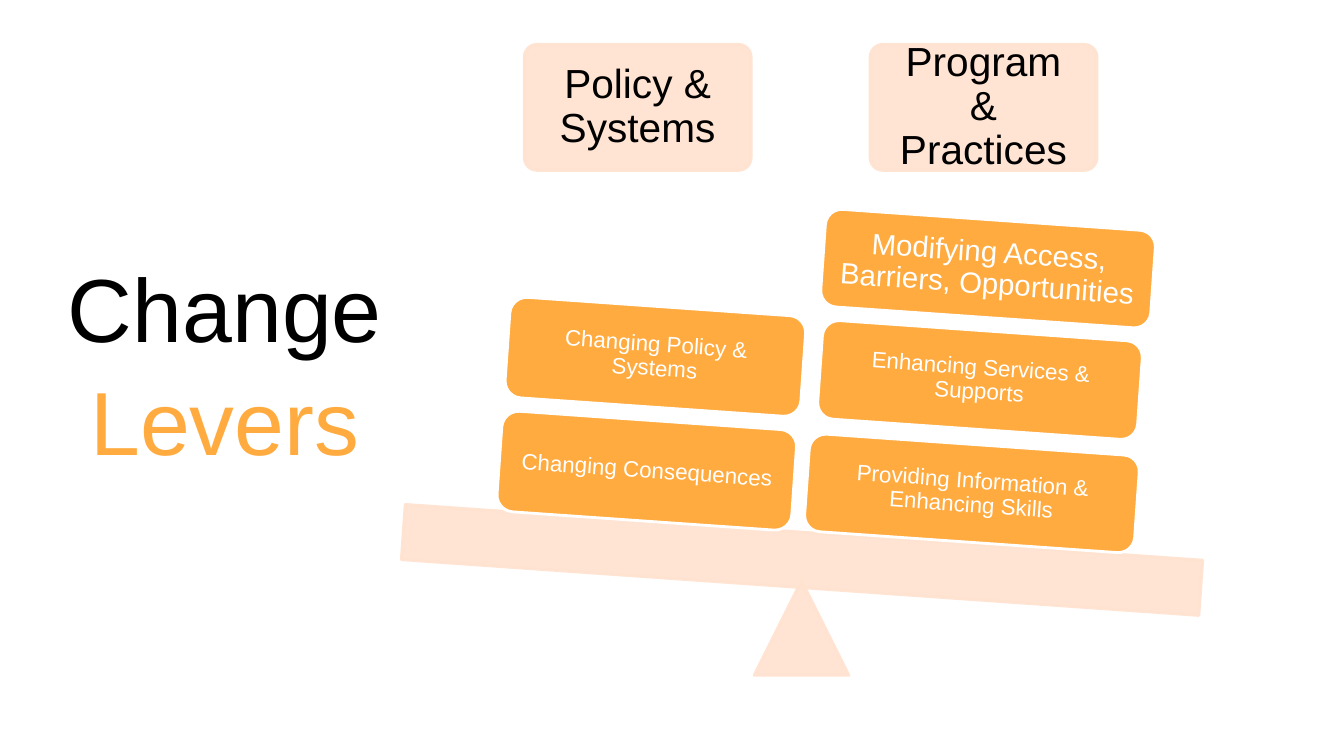
from lxml import etree
from pptx import Presentation
from pptx.dml.color import RGBColor
from pptx.enum import shapes, text
from pptx.oxml.ns import qn
from pptx.util import Inches, Pt

PEACH, ORANGE, WHITE, BLACK = "FFE2CF", "FFAB40", "FFFFFF", "000000"
TILT = 4
HEADINGS = [(5.2, "Policy & Systems"), (8.63, "Program & Practices")]
WEIGHTS = [
    (8, 4.41, 3.28, 0.97, "Providing Information & Enhancing Skills", 16),
    (8.13, 3.28, 3.18, 0.98, "Enhancing Services & Supports", 16),
    (8.16, 2.18, 3.28, 0.97, "Modifying Access, Barriers, Opportunities", 21),
    (4.95, 4.17, 2.93, 1, "Changing Consequences", 16),
    (5.03, 3.04, 2.94, 1, "Changing Policy & Systems", 16),
]


def color(value):
    return RGBColor.from_string(value)


def set_margins(frame, inset):
    frame.margin_left = frame.margin_right = Inches(inset)
    frame.margin_top = frame.margin_bottom = Inches(inset)
    frame.vertical_anchor = text.MSO_ANCHOR.MIDDLE
    frame.word_wrap = True


def add_block(page, kind, place, fill, line, rotation=0):
    block = page.shapes.add_shape(kind, *map(Inches, place))
    block.shadow.inherit = False
    block.rotation = rotation
    block.fill.solid()
    block.fill.fore_color.rgb = color(fill)
    block.line.color.rgb = color(line)
    block.line.width = Pt(2)
    return block


def soften(block):
    for tone in block._element.spPr.iter(qn("a:srgbClr")):
        etree.SubElement(tone, qn("a:alpha"), val="90000")


def add_label(block, words, size, ink, inset):
    set_margins(block.text_frame, inset)
    para = block.text_frame.paragraphs[0]
    para.text = words
    para.alignment = text.PP_ALIGN.CENTER
    para.line_spacing = 0.9
    para.font.name = "Arial"
    para.font.size = Pt(size)
    para.font.color.rgb = color(ink)


def add_title(page):
    box = page.shapes.add_textbox(*map(Inches, (0.15, 0.59, 4.16, 5.97)))
    set_margins(box.text_frame, 0.1)
    para = box.text_frame.paragraphs[0]
    para.alignment = text.PP_ALIGN.CENTER
    para.line_spacing = 1.05
    para.font.name = "Arial"
    para.font.size = Pt(64)
    first = para.add_run()
    first.text = "Change"
    first.font.color.rgb = color(BLACK)
    para.add_line_break()
    second = para.add_run()
    second.text = "Levers"
    second.font.color.rgb = color(ORANGE)


def main():
    deck = Presentation()
    deck.slide_width, deck.slide_height = Inches(13.33), Inches(7.5)
    page = deck.slides.add_slide(deck.slide_layouts[6])
    kinds = shapes.MSO_SHAPE

    add_title(page)
    for left, words in HEADINGS:
        heading = add_block(page, kinds.ROUNDED_RECTANGLE, (left, 0.44, 2.25, 1.25), PEACH, PEACH)
        heading.adjustments[0] = 0.1
        soften(heading)
        add_label(heading, words, 29, BLACK, 0.13)

    soften(add_block(page, kinds.ISOSCELES_TRIANGLE, (7.48, 5.76, 0.94, 0.94), PEACH, PEACH))
    soften(add_block(page, kinds.RECTANGLE, (3.99, 5.28, 7.93, 0.55), PEACH, PEACH, TILT))

    for *place, words, size in WEIGHTS:
        weight = add_block(page, kinds.ROUNDED_RECTANGLE, place, ORANGE, WHITE, TILT)
        add_label(weight, words, size, WHITE, 0.08)

    deck.save("out.pptx")


if __name__ == "__main__":
    main()
